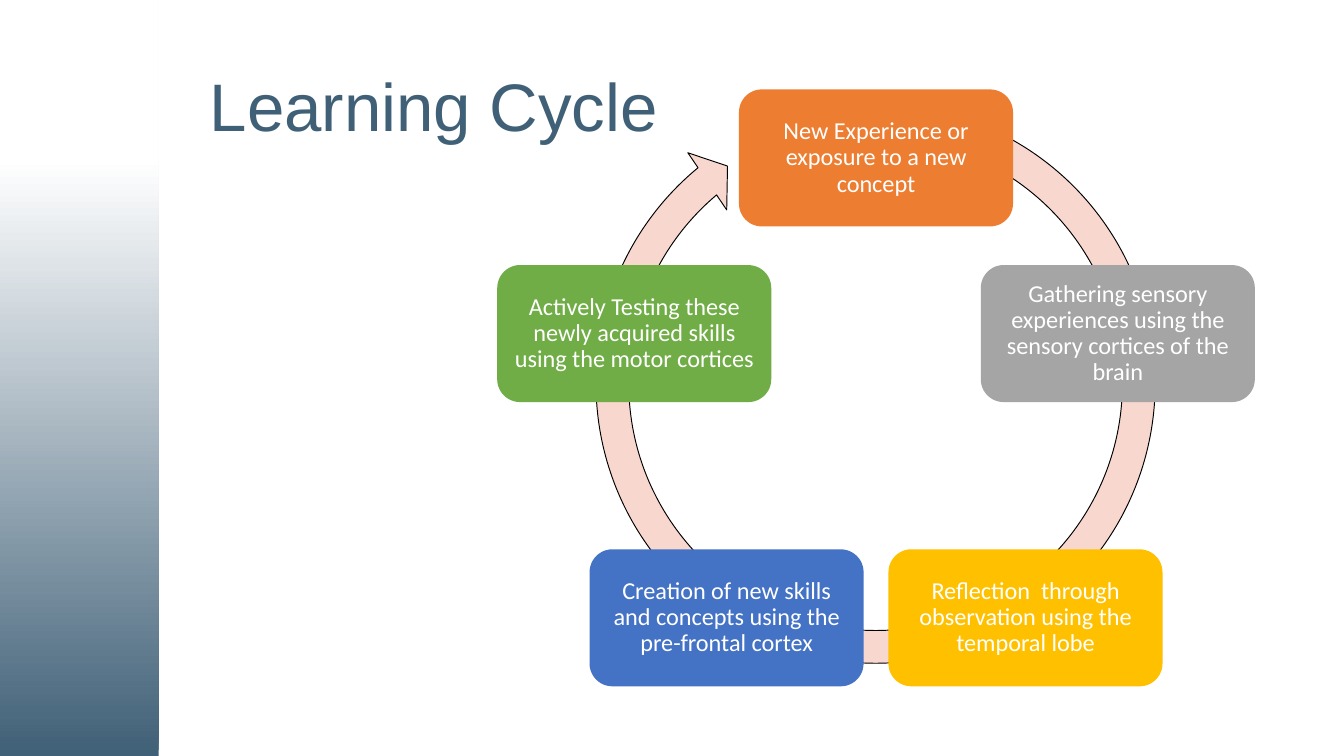
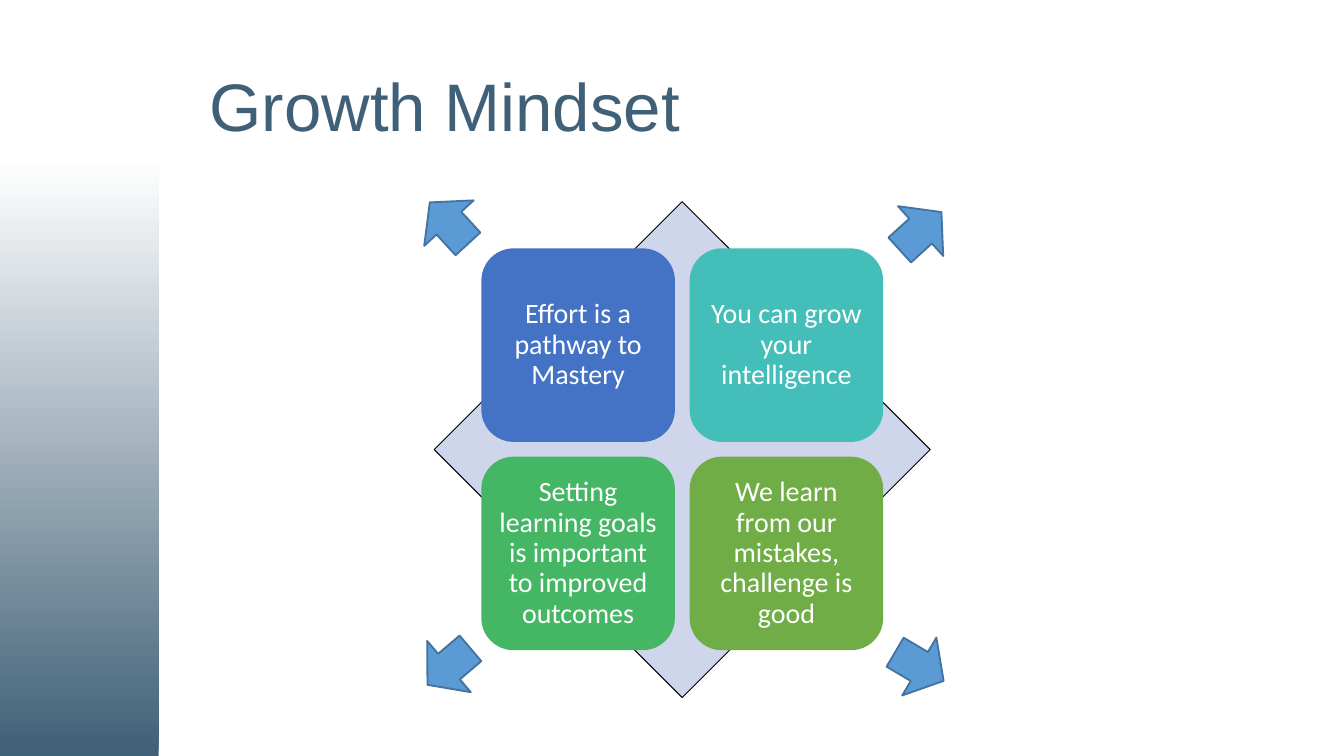
"""Build the Learning Cycle and Growth Mindset slides."""
import math
from dataclasses import dataclass
from typing import Optional

import pptx
import pptx.dml.color
import pptx.enum.shapes
import pptx.enum.text
import pptx.util

Pt = pptx.util.Pt
SHAPES = pptx.enum.shapes.MSO_SHAPE
ALIGN = pptx.enum.text.PP_ALIGN

SLIDE_WIDTH, SLIDE_HEIGHT = 720, 405
BAND_WIDTH = 85
SLATE = "406077"
WHITE = "FFFFFF"
BLACK = "000000"
BLUE = "4472C4"
GREEN = "70AD47"

CYCLE_CENTRE_X, CYCLE_CENTRE_Y = 469.3, 220.8
CYCLE_RADIUS = 136.2
STEP_WIDTH, STEP_HEIGHT = 146.8, 73.4
STEP_TEXT_SIZE = 13

TILE_LEFT, TILE_TOP = 257.9, 133.1
TILE_SIZE, TILE_PITCH = 103.7, 111.6
TILE_TEXT_SIZE = 15


@dataclass(frozen=True)
class Frame:
    left: float
    top: float
    width: float
    height: float


@dataclass(frozen=True)
class Card:
    text: str
    fill: str


@dataclass(frozen=True)
class Outline:
    colour: str
    width: float


@dataclass(frozen=True)
class Arrow:
    left: float
    top: float
    rotation: float


TITLE_FRAME = Frame(105.1, 21.6, 520.6, 74.2)
RING_FRAME = Frame(309.6, 46.1, 319, 319)
DIAMOND_FRAME = Frame(232.6, 108, 265.7, 265.7)
THIN_OUTLINE = Outline(BLACK, 0.5)
ARROW_OUTLINE = Outline("43739E", 1)
RING_ADJUSTMENTS = (0.055, 3.307, 138.152, 173.621, 0.058)

CYCLE_STEPS = (
    Card("New Experience or exposure to a new concept", "ED7D31"),
    Card("Gathering sensory experiences using the sensory cortices of the brain", "A5A5A5"),
    Card("Reflection  through observation using the temporal lobe", "FFC000"),
    Card("Creation of new skills and concepts using the pre-frontal cortex", BLUE),
    Card("Actively Testing these newly acquired skills using the motor cortices", GREEN),
)
MINDSET_TILES = (
    Card("Effort is a pathway to Mastery", BLUE),
    Card("You can grow your intelligence", "43BEB9"),
    Card("Setting learning goals is important to improved outcomes", "45B664"),
    Card("We learn from our mistakes, challenge is good", GREEN),
)
CORNER_ARROWS = (
    Arrow(478.1, 105.8, 317.7),
    Arrow(477.4, 339.1, 30.6),
    Arrow(225.4, 101.5, 227.4),
    Arrow(225.4, 339.1, 139.6),
)


def rgb(colour: str) -> pptx.dml.color.RGBColor:
    """Turn a hex string into a colour."""
    return pptx.dml.color.RGBColor.from_string(colour)


def add_shape(slide, kind, frame: Frame, fill: str, outline: Optional[Outline] = None):
    """Draw a flat preset shape."""
    shape = slide.shapes.add_shape(
        kind, Pt(frame.left), Pt(frame.top), Pt(frame.width), Pt(frame.height)
    )
    shape.shadow.inherit = False
    shape.fill.solid()
    shape.fill.fore_color.rgb = rgb(fill)
    if outline is None:
        shape.line.fill.background()
    else:
        shape.line.color.rgb = rgb(outline.colour)
        shape.line.width = Pt(outline.width)
    return shape


def set_text(shape, text: str, font: str, size: float, colour: str, alignment) -> None:
    """Write one vertically centred paragraph into a shape."""
    frame = shape.text_frame
    frame.text = text
    frame.word_wrap = True
    frame.auto_size = pptx.enum.text.MSO_AUTO_SIZE.NONE
    frame.vertical_anchor = pptx.enum.text.MSO_ANCHOR.MIDDLE
    paragraph = frame.paragraphs[0]
    paragraph.alignment = alignment
    paragraph.line_spacing = 0.9
    run_font = paragraph.runs[0].font
    run_font.name = font
    run_font.size = Pt(size)
    run_font.color.rgb = rgb(colour)


def add_card(slide, card: Card, frame: Frame, size: float) -> None:
    """Draw a rounded card whose margins follow its text size."""
    shape = add_shape(slide, SHAPES.ROUNDED_RECTANGLE, frame, card.fill)
    set_text(shape, card.text, "Calibri", size, WHITE, ALIGN.CENTER)
    text_frame = shape.text_frame
    text_frame.margin_left = text_frame.margin_right = Pt(0.3 * size)
    text_frame.margin_top = text_frame.margin_bottom = Pt(0.3 * size)


def add_titled_slide(presentation, title: str):
    """Add a title-only slide with the shared title style."""
    slide = presentation.slides.add_slide(presentation.slide_layouts[5])
    shape = slide.shapes.title
    shape.left, shape.top = Pt(TITLE_FRAME.left), Pt(TITLE_FRAME.top)
    shape.width, shape.height = Pt(TITLE_FRAME.width), Pt(TITLE_FRAME.height)
    set_text(shape, title, "Arial", 36, SLATE, ALIGN.LEFT)
    return slide


def move_band_to_layout(slide) -> None:
    """Put the gradient side band on the layout behind every slide."""
    band = add_shape(slide, SHAPES.RECTANGLE, Frame(0, 0, BAND_WIDTH, SLIDE_HEIGHT), SLATE)
    band.fill.gradient()
    band.fill.gradient_angle = 90
    for stop, position, colour in zip(band.fill.gradient_stops, (0, 0.79), (SLATE, WHITE)):
        stop.position = position
        stop.color.rgb = rgb(colour)
    slide.slide_layout.shapes.element.insert(2, band.element)


def draw_learning_cycle(slide) -> None:
    """Draw the ring and its evenly spaced steps."""
    ring = add_shape(slide, SHAPES.CIRCULAR_ARROW, RING_FRAME, "F8D7CE", THIN_OUTLINE)
    for index, value in enumerate(RING_ADJUSTMENTS):
        ring.adjustments[index] = value
    for index, step in enumerate(CYCLE_STEPS):
        angle = math.tau * index / len(CYCLE_STEPS)
        left = CYCLE_CENTRE_X + CYCLE_RADIUS * math.sin(angle) - STEP_WIDTH / 2
        top = CYCLE_CENTRE_Y - CYCLE_RADIUS * math.cos(angle) - STEP_HEIGHT / 2
        add_card(slide, step, Frame(left, top, STEP_WIDTH, STEP_HEIGHT), STEP_TEXT_SIZE)


def draw_growth_mindset(slide) -> None:
    """Draw the diamond, its four tiles and the outward arrows."""
    add_shape(slide, SHAPES.DIAMOND, DIAMOND_FRAME, "CFD5EA", THIN_OUTLINE)
    for index, tile in enumerate(MINDSET_TILES):
        row, column = divmod(index, 2)
        left = TILE_LEFT + column * TILE_PITCH
        top = TILE_TOP + row * TILE_PITCH
        add_card(slide, tile, Frame(left, top, TILE_SIZE, TILE_SIZE), TILE_TEXT_SIZE)
    for arrow in CORNER_ARROWS:
        frame = Frame(arrow.left, arrow.top, 30.2, 36)
        shape = add_shape(slide, SHAPES.RIGHT_ARROW, frame, "5B9BD5", ARROW_OUTLINE)
        shape.rotation = arrow.rotation


def main() -> None:
    """Build and save the presentation."""
    presentation = pptx.Presentation()
    presentation.slide_width = Pt(SLIDE_WIDTH)
    presentation.slide_height = Pt(SLIDE_HEIGHT)
    cycle_slide = add_titled_slide(presentation, "Learning Cycle")
    move_band_to_layout(cycle_slide)
    draw_learning_cycle(cycle_slide)
    draw_growth_mindset(add_titled_slide(presentation, "Growth Mindset"))
    presentation.save("out.pptx")


if __name__ == "__main__":
    main()
